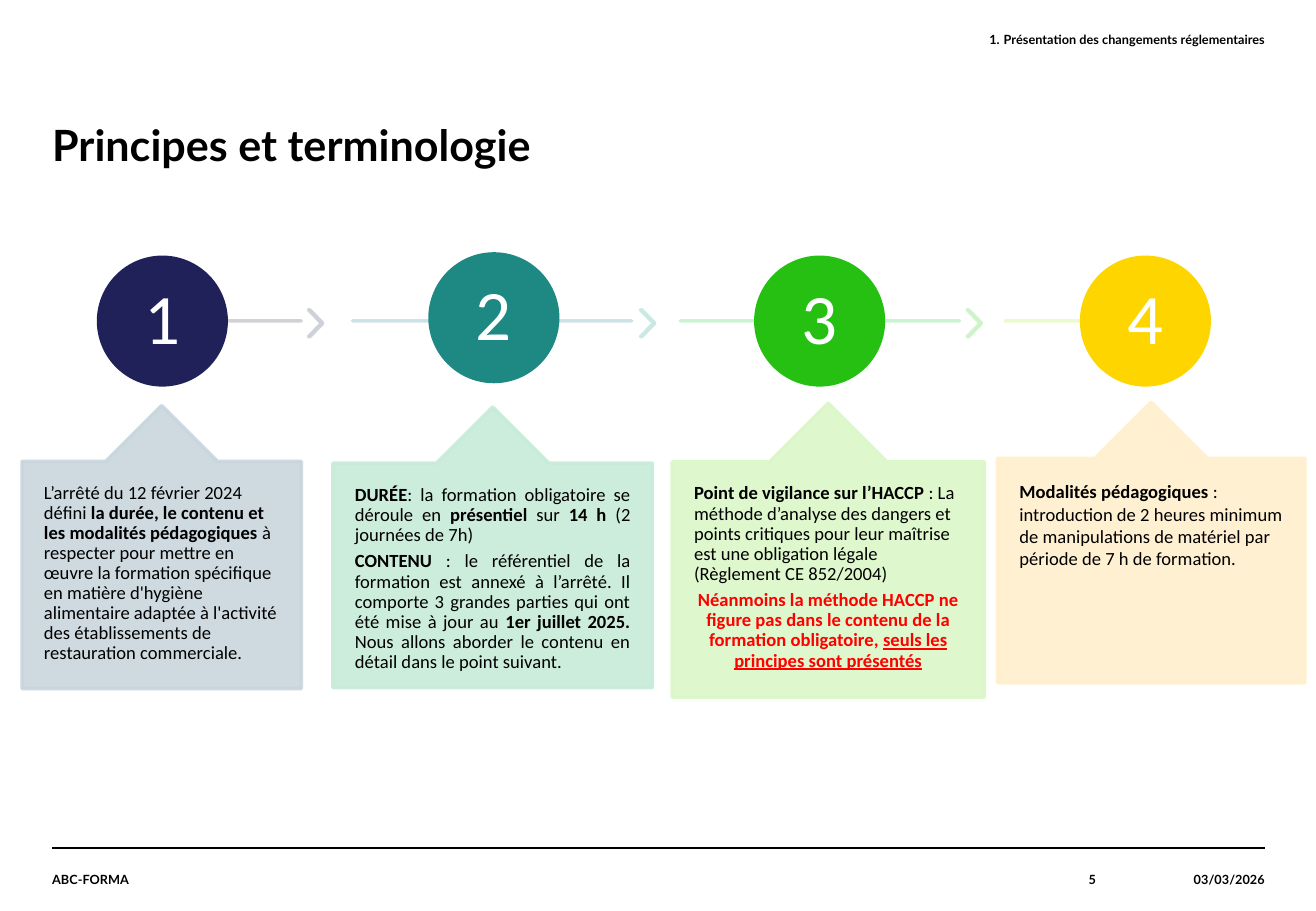
from dataclasses import dataclass
from typing import Optional

from lxml.etree import SubElement
from pptx import Presentation
from pptx.dml.color import RGBColor
from pptx.enum.shapes import MSO_CONNECTOR, MSO_SHAPE
from pptx.enum.text import MSO_ANCHOR, PP_ALIGN
from pptx.oxml.ns import qn
from pptx.util import Cm, Pt

BLACK = RGBColor(0x00, 0x00, 0x00)
WHITE = RGBColor(0xFF, 0xFF, 0xFF)
RED = RGBColor(0xFF, 0x00, 0x00)
NAVY = RGBColor(0x21, 0x21, 0x5A)
TEAL = RGBColor(0x1E, 0x89, 0x83)
GREEN = RGBColor(0x26, 0xC0, 0x13)
GOLD = RGBColor(0xFF, 0xD5, 0x00)
GREY_RAIL = RGBColor(0xCD, 0xCD, 0xD2)
GREY_TIP = RGBColor(0xCB, 0xCF, 0xD7)
GREY_CARD = RGBColor(0xC9, 0xD5, 0xDD)
TEAL_RAIL = RGBColor(0xC8, 0xE0, 0xE2)
TEAL_TIP = RGBColor(0xC8, 0xE7, 0xE1)
TEAL_CARD = RGBColor(0xC7, 0xEB, 0xD9)
GREEN_RAIL = RGBColor(0xC7, 0xF0, 0xCF)
GREEN_TIP = RGBColor(0xCC, 0xF3, 0xC7)
GREEN_CARD = RGBColor(0xDB, 0xF7, 0xC8)
GOLD_RAIL = RGBColor(0xEB, 0xFA, 0xC9)
GOLD_CARD = RGBColor(0xFF, 0xEF, 0xCC)

LEFT, RIGHT = PP_ALIGN.LEFT, PP_ALIGN.RIGHT
MID, FULL = PP_ALIGN.CENTER, PP_ALIGN.JUSTIFY
TOP, CENTER = MSO_ANCHOR.TOP, MSO_ANCHOR.MIDDLE

HEAD = {"name": "Lato", "size": Pt(25.5), "bold": True}
SMALL = {"name": "Lato", "size": Pt(7.5), "bold": True}
DIGIT = {"name": "Calibri", "size": Pt(42)}
BODY = {"name": "Calibri", "size": Pt(11)}
BOLD = {"bold": True}
UNDER = {"bold": True, "underline": True}

Box = tuple[float, float, float, float]


@dataclass
class Para:
    runs: list[tuple[str, dict]]
    align: PP_ALIGN = LEFT
    color: RGBColor = BLACK
    space: float = 0.9


@dataclass
class Step:
    rail: tuple[float, float]
    rail_color: RGBColor
    tip: Optional[tuple[float, RGBColor]]
    disc: tuple[float, float]
    disc_color: RGBColor
    card: Box
    card_color: RGBColor
    text: list[Para]


STEPS = [
    Step((3.71, 2.59), GREY_RAIL, (6.45, GREY_TIP), (2.06, 5.38), NAVY,
         (0.46, 8.48, 5.84, 5.92), GREY_CARD, [
        Para([("L’arrêté du 12 février 2024 défini ", {}),
              ("la durée, le contenu et les modalités pédagogiques ", BOLD),
              ("à respecter pour mettre en œuvre la formation spécifique "
               "en matière d'hygiène alimentaire adaptée à l'activité des "
               "établissements de restauration commerciale.", {})])]),
    Step((7.37, 5.84), TEAL_RAIL, (13.39, TEAL_TIP), (8.99, 5.31), TEAL,
         (6.96, 8.51, 6.68, 5.87), TEAL_CARD, [
        Para([("DURÉE", BOLD),
              (": la formation obligatoire se déroule en ", {}),
              ("présentiel ", BOLD), ("sur", {}), (" 14 h ", BOLD),
              ("(2 journées de 7h)", {})], FULL),
        Para([("CONTENU ", BOLD),
              (": le référentiel de la formation est annexé à l’arrêté. "
               "Il comporte 3 grandes parties qui ont été mise à jour au ", {}),
              ("1er juillet 2025. ", BOLD),
              ("Nous allons aborder le contenu en détail dans le point "
               "suivant. ", {})], FULL)]),
    Step((14.22, 5.84), GREEN_RAIL, (20.22, GREEN_TIP), (15.8, 5.38), GREEN,
         (14.05, 8.43, 6.53, 6.15), GREEN_CARD, [
        Para([("Point de vigilance sur l’HACCP", BOLD),
              (" : La méthode d’analyse des dangers et points critiques pour "
               "leur maîtrise est une obligation légale "
               "(Règlement CE 852/2004)", {})]),
        Para([("Néanmoins la méthode HACCP ne figure pas dans le contenu de "
               "la formation obligatoire, ", BOLD),
              ("seuls les principes sont présentés", UNDER)], MID, RED)]),
    Step((21.01, 2.92), GOLD_RAIL, None, (22.61, 5.38), GOLD,
         (20.85, 8.41, 6.43, 5.87), GOLD_CARD, [
        Para([("Modalités pédagogiques ", BOLD),
              (": introduction de 2 heures minimum de manipulations de "
               "matériel par période de 7 h de formation.", {})], space=1.0)]),
]


def write(shape, paras: list[Para], base: dict, anchor=TOP,
          inset: float = 0) -> None:
    frame = shape.text_frame
    form = {"word_wrap": True, "vertical_anchor": anchor}
    sides = ("left", "top", "right", "bottom")
    form |= {f"margin_{side}": Cm(inset) for side in sides}
    for name, value in form.items():
        setattr(frame, name, value)
    for i, para in enumerate(paras):
        line = frame.add_paragraph() if i else frame.paragraphs[0]
        line.alignment, line.line_spacing = para.align, para.space
        if i < len(paras) - 1:
            line.space_after = Pt(4)
        for text, extra in para.runs:
            run = line.add_run()
            run.text = text
            run.font.color.rgb = para.color
            for name, value in (base | extra).items():
                setattr(run.font, name, value)


def label(slide, box: Box, text: str, base: dict, align=LEFT, anchor=TOP,
          space: float = 1.0):
    shape = slide.shapes.add_textbox(*map(Cm, box))
    write(shape, [Para([(text, base)], align, space=space)], base, anchor)
    return shape


def draw(slide, kind, box: Box, color: RGBColor, clear: bool = True,
         adjust: tuple = ()):
    shape = slide.shapes.add_shape(kind, *map(Cm, box))
    shape.shadow.inherit = False
    shape.fill.solid()
    shape.fill.fore_color.rgb = color
    shape.line.color.rgb = color
    shape.line.width = Pt(2)
    for i, value in enumerate(adjust):
        shape.adjustments[i] = value
    if clear:
        for node in list(shape._element.spPr.iter(qn("a:srgbClr"))):
            SubElement(node, qn("a:alpha"), val="90000")
    return shape


def stage(slide, num: int, step: Step) -> None:
    # Rail and arrow tip
    left, width = step.rail
    draw(slide, MSO_SHAPE.RECTANGLE, (left, 6.71, width, 0), step.rail_color)
    if step.tip:
        left, color = step.tip
        draw(slide, MSO_SHAPE.CHEVRON, (left, 6.48, 0.3, 0.56), color,
             adjust=(0.9,))
    # Numbered disc
    disc = draw(slide, MSO_SHAPE.OVAL, (*step.disc, 2.67, 2.67),
                step.disc_color, clear=False)
    write(disc, [Para([(str(num), {})], MID, WHITE)], DIGIT, CENTER, 0.1)
    # Callout card
    card = draw(slide, MSO_SHAPE.UP_ARROW_CALLOUT, step.card, step.card_color,
                adjust=(0.5, 0.2, 0.2, 1))
    write(card, step.text, BODY, inset=0.46)


def main() -> None:
    deck = Presentation()
    deck.slide_width, deck.slide_height = Cm(27.51), Cm(19.05)
    slide = deck.slides.add_slide(deck.slide_layouts[6])

    # Footer rule
    rule = slide.shapes.add_connector(MSO_CONNECTOR.STRAIGHT, Cm(1.09),
                                      Cm(17.73), Cm(26.44), Cm(17.73))
    rule.line.color.rgb = BLACK
    rule.line.width = Pt(0.8)
    SubElement(rule._element.spPr, qn("a:effectLst"))

    # Title and numbered section header
    label(slide, (1.09, 2.59, 25.35, 2.67), "Principes et terminologie", HEAD,
          space=0.9)
    topic = label(slide, (9.96, 0.66, 16.48, 1.32),
                  "Présentation des changements réglementaires", SMALL, RIGHT)
    props = topic.text_frame.paragraphs[0]._p.get_or_add_pPr()
    props.set("marL", str(Cm(0.3)))
    props.set("indent", str(-Cm(0.3)))
    SubElement(props, qn("a:buFont"), typeface="+mj-lt")
    SubElement(props, qn("a:buAutoNum"), type="arabicPeriod")

    # Footer
    for left, width, text, align in [
        (22.91, 3.53, "03/03/2026", RIGHT),
        (1.09, 17.75, "ABC-FORMA", LEFT),
        (18.85, 4.06, "5", RIGHT),
    ]:
        label(slide, (left, 17.73, width, 1.32), text, SMALL, align, CENTER)

    # Steps
    for num, step in enumerate(STEPS, 1):
        stage(slide, num, step)

    deck.save("out.pptx")


if __name__ == "__main__":
    main()
